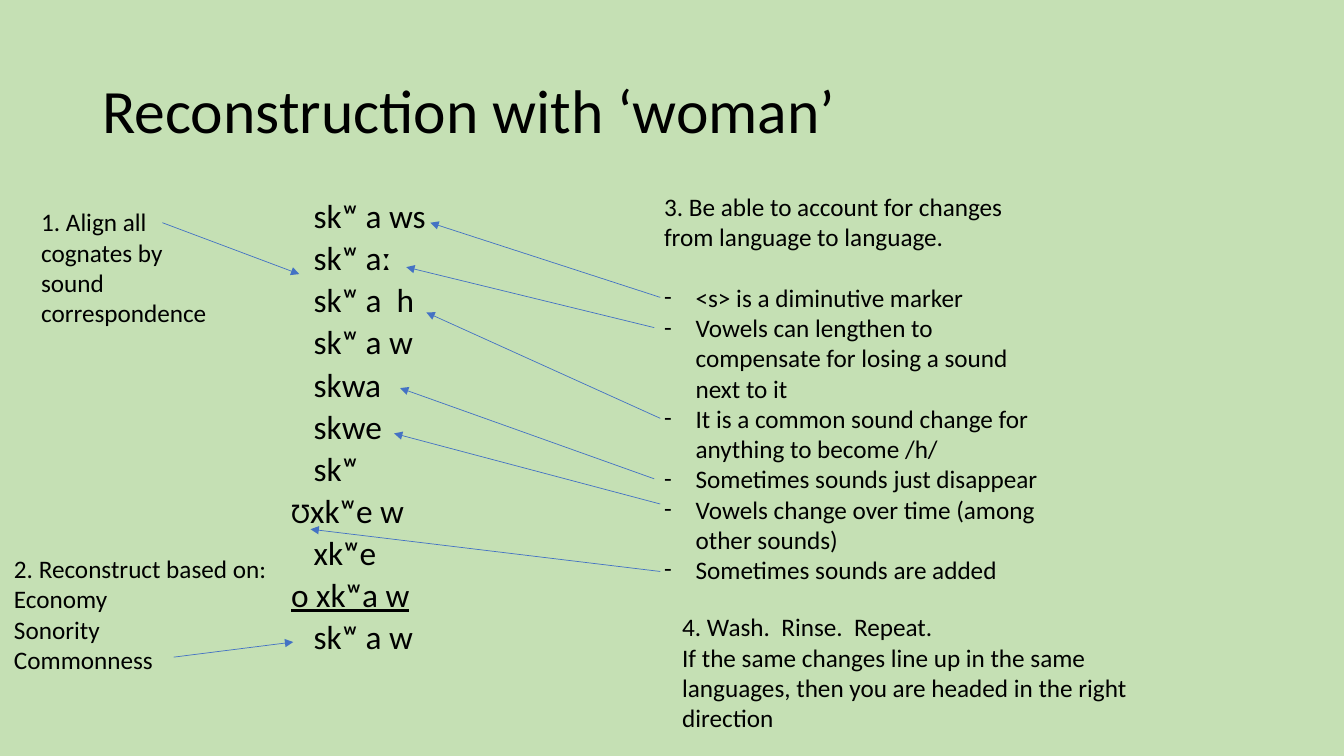
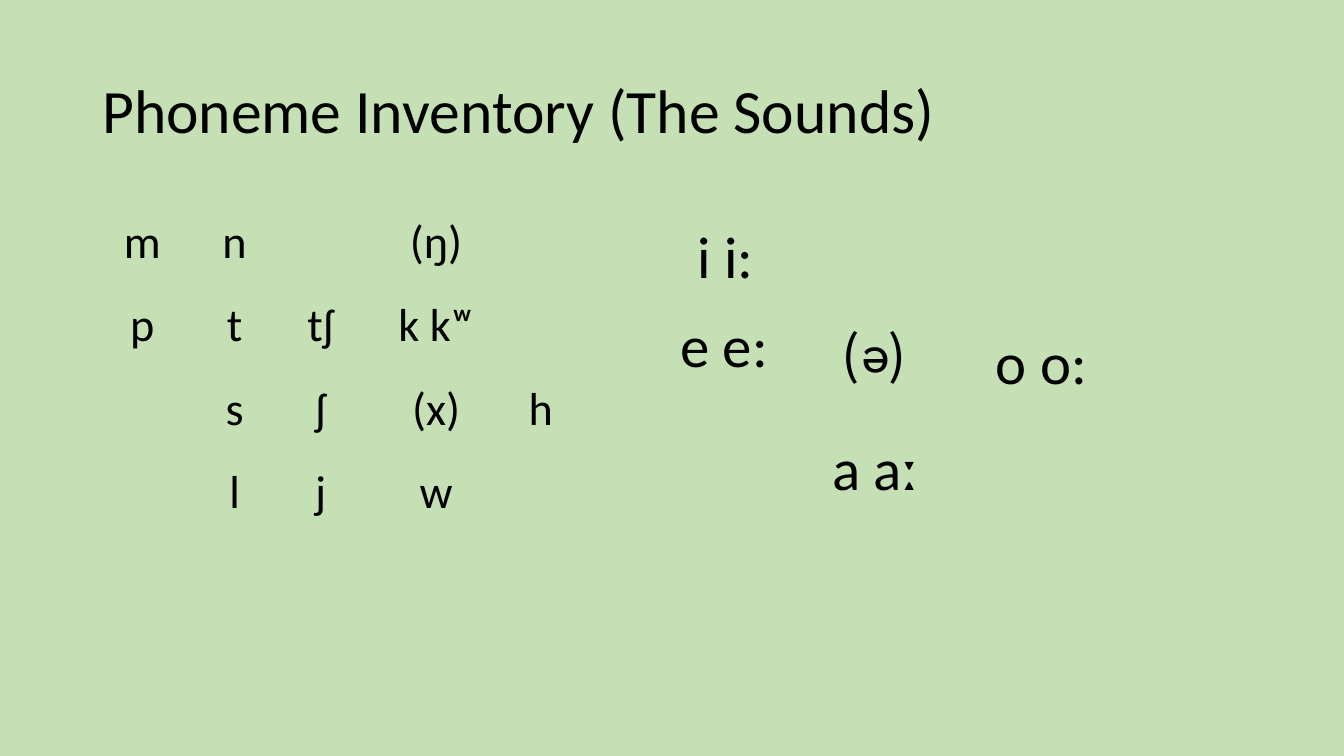
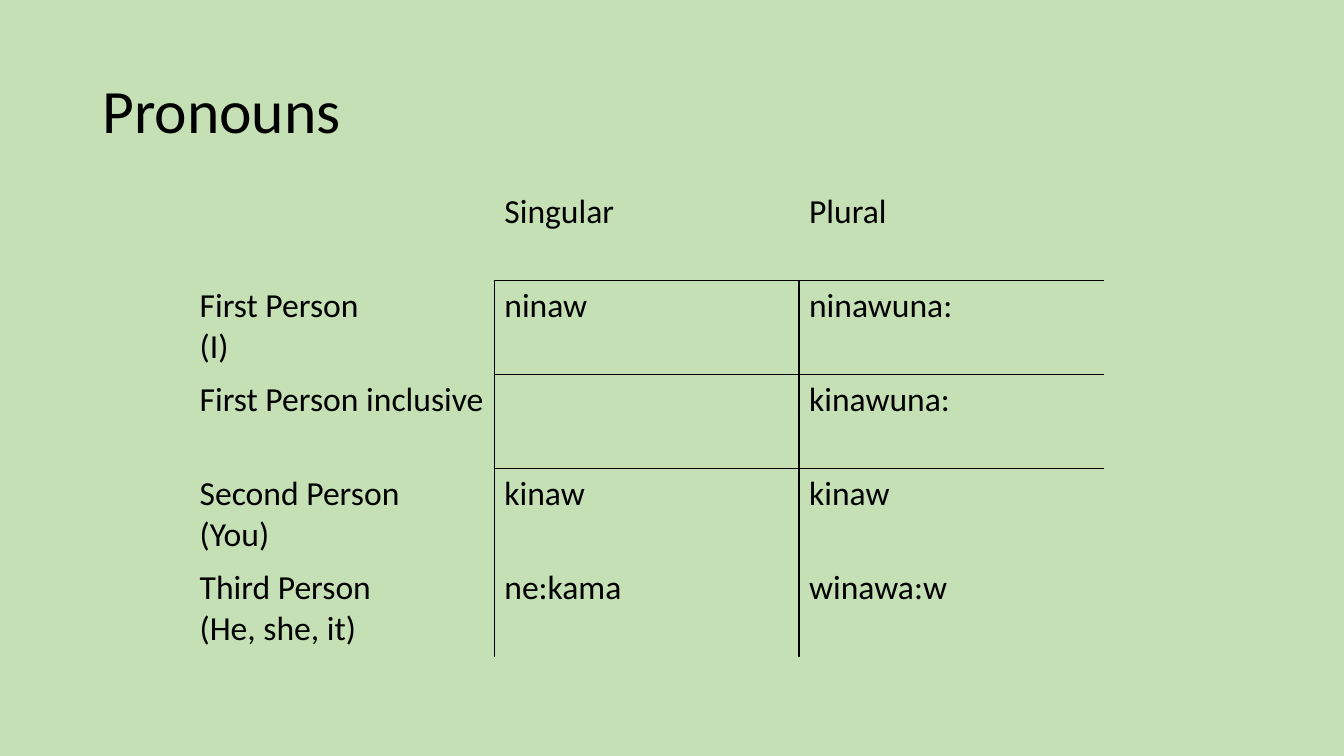
from lxml import etree
from pptx import Presentation
from pptx.dml.color import RGBColor
from pptx.enum.shapes import MSO_CONNECTOR
from pptx.enum.text import MSO_ANCHOR, PP_ALIGN
from pptx.oxml.ns import qn
from pptx.util import Pt

COLORS = {"background": "C5E0B4", "text": "000000", "arrow": "4472C4"}
FONT = "Calibri"
ACCENT_FONT = "League Spartan"
NO_STYLE = "{2D5ABB26-0587-4C30-8999-92F81FD0307C}"
TABLE_TOP = 133.2


def rgb(name):
    return RGBColor.from_string(COLORS[name])


# Text
def add_run(p, text, size, font=FONT, underline=None):
    r = p.add_run()
    r.text = text
    r.font.size = Pt(size)
    r.font.name = font
    r.font.underline = underline
    r.font.color.rgb = rgb("text")


def add_par(tf, spacing=None, before=0, align=None):
    p = tf.paragraphs[0]
    if p.runs:
        p = tf.add_paragraph()
    if spacing:
        p.line_spacing = spacing
    p.space_before = Pt(before)
    p.alignment = align
    return p


def indent(p, left, bullet=None):
    pPr = p._p.get_or_add_pPr()
    pPr.set("marL", str(Pt(left)))
    if bullet:
        pPr.set("indent", str(-Pt(left)))
        etree.SubElement(pPr, qn("a:buFont"), typeface=FONT)
        etree.SubElement(pPr, qn("a:buChar"), char=bullet)


def add_box(s, left, top, width, height):
    tf = s.shapes.add_textbox(Pt(left), Pt(top), Pt(width), Pt(height)).text_frame
    tf.word_wrap = True
    return tf


def add_note(s, box, lines):
    tf = add_box(s, *box)
    for line in lines:
        add_run(add_par(tf), line, 18)
    return tf


def add_titled_slide(prs, title):
    s = prs.slides.add_slide(prs.slide_layouts[6])
    tf = add_box(s, 66, 28.8, 828, 104.4)
    tf.vertical_anchor = MSO_ANCHOR.MIDDLE
    add_run(add_par(tf, spacing=0.9), title, 44)
    return s


# Arrows
def add_arrow(s, x1, y1, x2, y2):
    line = s.shapes.add_connector(MSO_CONNECTOR.STRAIGHT, Pt(x1), Pt(y1), Pt(x2), Pt(y2))
    line.line.color.rgb = rgb("arrow")
    line.line.width = Pt(0.5)
    etree.SubElement(line.line._get_or_add_ln(), qn("a:tailEnd"), type="triangle")
    etree.SubElement(line._element.spPr, qn("a:effectLst"))


# Tables
def add_plain_table(s, left, widths, row_height, rows):
    frame = s.shapes.add_table(len(rows), len(widths), Pt(left), Pt(TABLE_TOP),
                               Pt(sum(widths)), Pt(row_height * len(rows)))
    table = frame.table
    table.first_row = table.horz_banding = False
    table._tbl.tblPr.find(qn("a:tableStyleId")).text = NO_STYLE
    for column, width in zip(table.columns, widths):
        column.width = Pt(width)
    for row in table.rows:
        row.height = Pt(row_height)
    for cell in table.iter_cells():
        cell.fill.background()
    return table


def add_borders(cell, sides):
    tcPr = cell._tc.get_or_add_tcPr()
    for i, side in enumerate(sides):
        ln = etree.Element(qn("a:ln" + side), w=str(Pt(1)))
        fill = etree.SubElement(ln, qn("a:solidFill"))
        etree.SubElement(fill, qn("a:srgbClr"), val=COLORS["text"])
        tcPr.insert(i, ln)


def add_sound_table(s, left, widths, row_height, rows, size, inset):
    table = add_plain_table(s, left, widths, row_height, rows)
    for i, row in enumerate(rows):
        for j, sound in enumerate(row):
            if not sound:
                continue
            cell = table.cell(i, j)
            cell.vertical_anchor = MSO_ANCHOR.MIDDLE
            cell.margin_left = cell.margin_right = Pt(inset)
            cell.margin_top = cell.margin_bottom = 0
            p = add_par(cell.text_frame, spacing=1.5, align=PP_ALIGN.CENTER)
            add_run(p, sound, size, ACCENT_FONT if sound == "(ə)" else FONT)
    return table


# Slides
def build_reconstruction(prs):
    s = add_titled_slide(prs, "Reconstruction with ‘woman’")

    # Aligned cognates; the ones with an extra first vowel start further left
    tf = add_box(s, 200.9, 144, 118, 342.7)
    cognates = ["skʷ a ws", "skʷ aː", "skʷ a  h", "skʷ a w", "skwa", "skwe",
                "skʷ", "Ʊxkʷe w", "xkʷe", "o xkʷa w", "skʷ a w"]
    for word in cognates:
        p = add_par(tf, spacing=0.7, before=10)
        if word[0] not in "Ʊo":
            indent(p, 16.1)
        if word[0] == "Ʊ":
            add_run(p, word[0], 20.4)
            word = word[1:]
        add_run(p, word, 23.8, underline=True if word[0] == "o" else None)

    # Steps
    add_note(s, (22.3, 144, 134.6, 94.3),
             ["1. Align all cognates by sound correspondence"])
    add_note(s, (2.9, 391.7, 198, 94.3),
             ["2. Reconstruct based on:", "Economy", "Sonority", "Commonness"])
    tf = add_note(s, (467.3, 133.2, 292.3, 290.9),
                  ["3. Be able to account for changes from language to language."])
    changes = ["<s> is a diminutive marker",
               "Vowels can lengthen to compensate for losing a sound next to it",
               "It is a common sound change for anything to become /h/",
               "Sometimes sounds just disappear",
               "Vowels change over time (among other sounds)",
               "Sometimes sounds are added"]
    for i, change in enumerate(changes):
        p = add_par(tf, before=0 if i else 21.6)
        indent(p, 22.5, "-")
        add_run(p, change, 18)
    add_note(s, (480.2, 433.4, 383, 94.3),
             ["4. Wash.  Rinse.  Repeat.",
              "If the same changes line up in the same languages, "
              "then you are headed in the right direction"])

    # Arrows from each step to the cognates
    for ends in [(124, 469.4, 209.5, 458.6), (116, 159.1, 213.8, 195.8),
                 (471.6, 212.4, 307.4, 159.1), (467.3, 234, 290.2, 190.8),
                 (471.6, 298.8, 304.6, 223.2), (467.3, 342, 285.8, 277.2),
                 (471.6, 360, 281.5, 309.6), (471.6, 408.2, 221.8, 378)]:
        add_arrow(s, *ends)


def build_phonemes(prs):
    s = add_titled_slide(prs, "Phoneme Inventory (The Sounds)")
    consonants = [["m", "n", "", "(ŋ)", ""],
                  ["p", "t", "tʃ", "k kʷ", ""],
                  ["", "s", "ʃ", "(x)", "h"],
                  ["", "l", "j", "w", ""]]
    add_sound_table(s, 66, [71.3, 60.5, 62.6, 102.2, 43.2], 53, consonants, 33, 15.1)
    vowels = [["i i:", "", ""],
              ["e e:", "(ə)", "o o:"],
              ["", "a aː", ""]]
    table = add_sound_table(s, 466.6, [103, 110.9, 126.7], 68.2, vowels, 42, 19.4)
    p = table.cell(1, 0).text_frame.paragraphs[0]
    p.alignment = PP_ALIGN.LEFT
    p.line_spacing = 1.07


def build_pronouns(prs):
    s = add_titled_slide(prs, "Pronouns")
    rows = [["", "Singular", "Plural"],
            ["First Person\n(I)", "ninaw", "ninawuna:"],
            ["First Person inclusive", "", "kinawuna:"],
            ["Second Person\n(You)", "kinaw", "kinaw"],
            ["Third Person\n(He, she, it)", "ne:kama", "winawa:w"]]
    table = add_plain_table(s, 135.4, [217.7] * 3, 67.2, rows)
    for i, row in enumerate(rows):
        for j, text in enumerate(row):
            cell = table.cell(i, j)
            for line in text.split("\n") if text else []:
                add_run(add_par(cell.text_frame), line, 24)
            # Rules between columns below the header, and around the first row
            edges = {"L": i and j, "R": i and j < 2,
                     "T": j and i in (1, 2), "B": j and i in (0, 1)}
            add_borders(cell, [side for side, drawn in edges.items() if drawn])


def main():
    prs = Presentation()
    prs.slide_width, prs.slide_height = Pt(960), Pt(540)
    fill = prs.slide_master.background.fill
    fill.solid()
    fill.fore_color.rgb = rgb("background")
    build_reconstruction(prs)
    build_phonemes(prs)
    build_pronouns(prs)
    prs.save("out.pptx")


if __name__ == "__main__":
    main()
